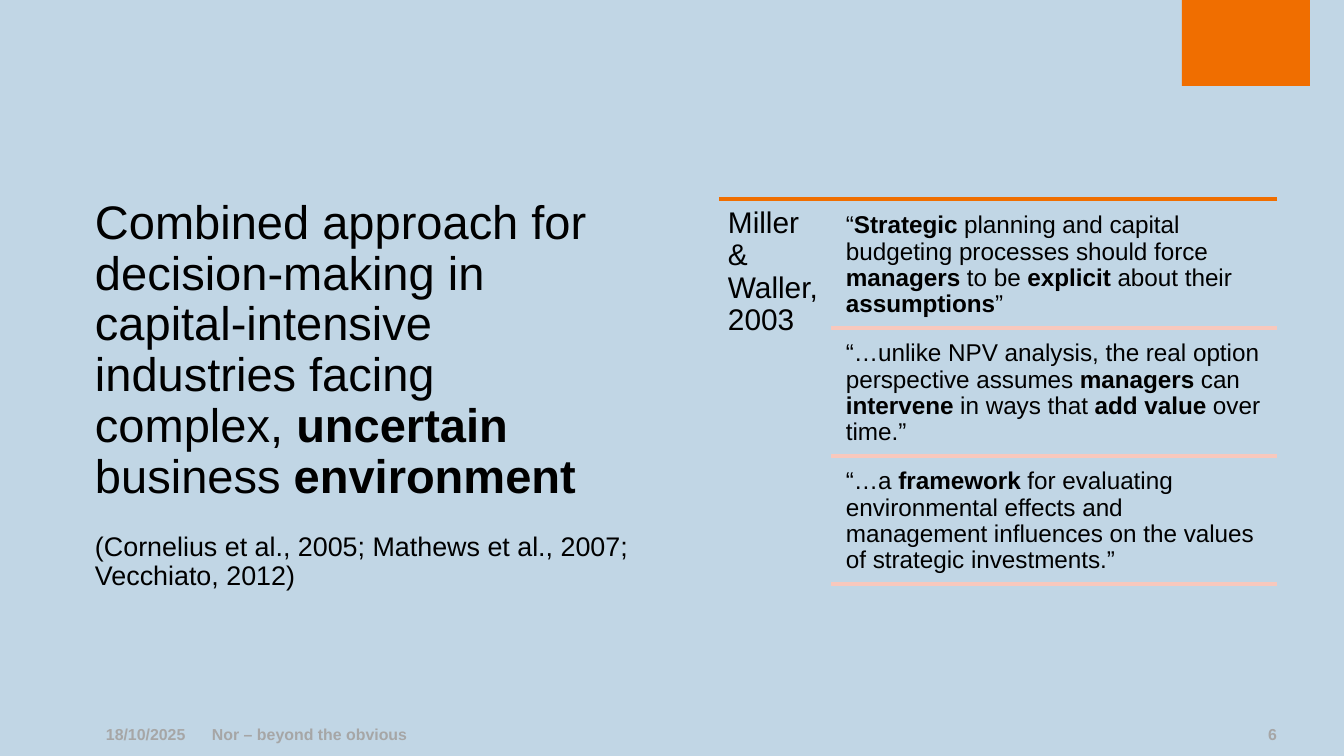
from pptx import Presentation
from pptx import util as u
from pptx.dml.color import RGBColor
from pptx.enum import shapes, text
from pptx.oxml.ns import qn
from lxml import etree

SCALE = 914400 / 134.4
ORANGE, PINK, BLACK, GREY, SKY = "F06E00", "F8C8BD", "000000", "A6A6A6", "C1D6E5"


def px(n):
    return u.Emu(round(n * SCALE))


def rgb(code):
    return RGBColor.from_string(code)


class Deck:
    font = "Arial"

    def __init__(self, wide, high):
        self.prs = Presentation()
        self.prs.slide_width, self.prs.slide_height = px(wide), px(high)
        self.slide = self.prs.slides.add_slide(self.prs.slide_layouts[6])
        fill = self.slide.background.fill
        fill.solid()
        fill.fore_color.rgb = rgb(SKY)

    def rect(self, x, y, w, h, color):
        box = self.slide.shapes.add_shape(
            shapes.MSO_SHAPE.RECTANGLE, px(x), px(y), px(w), px(h))
        box.shadow.inherit = False
        box.fill.solid()
        box.fill.fore_color.rgb = rgb(color)
        box.line.fill.background()

    def rule(self, x, y, end, color):
        line = self.slide.shapes.add_connector(
            shapes.MSO_CONNECTOR.STRAIGHT, px(x), px(y), px(end), px(y))
        line.line.color.rgb = rgb(color)
        line.line.width = u.Pt(2)
        etree.SubElement(line._element.spPr, qn("a:effectLst"))

    def text(self, x, y, w, h, paras, inset=0, color=BLACK, bold=False,
             anchor=text.MSO_ANCHOR.TOP, align=text.PP_ALIGN.LEFT):
        """Each paragraph is (words, size, space before); *stars* mark bold."""
        frame = self.slide.shapes.add_textbox(px(x), px(y), px(w), px(h)).text_frame
        frame.word_wrap = True
        frame.vertical_anchor = anchor
        frame.margin_left = frame.margin_right = px(inset)
        frame.margin_top = frame.margin_bottom = px(inset)
        for i, (words, size, gap) in enumerate(paras):
            para = frame.add_paragraph() if i else frame.paragraphs[0]
            para.alignment = align
            para.line_spacing = 0.9
            para.space_before = u.Pt(gap)
            para.font.name, para.font.size = self.font, u.Pt(size)
            para.font.color.rgb = rgb(color)
            para.font.bold = bold
            for j, part in enumerate(words.split("*")):
                if part:
                    run = para.add_run()
                    run.text = part
                    if j % 2:
                        run.font.bold = True


def main():
    deck = Deck(1344, 756)
    mid = text.MSO_ANCHOR.MIDDLE
    left, right = text.PP_ALIGN.LEFT, text.PP_ALIGN.RIGHT

    # Corner block
    deck.rect(1182, 0, 128, 86, ORANGE)

    # Title with sources
    deck.text(95, 196, 535, 398, [
        ("Combined approach for decision-making in capital-intensive industries "
         "facing complex, *uncertain* business *environment*", 25.2, 0),
        ("(Cornelius et al., 2005; Mathews et al., 2007; Vecchiato, 2012)", 14.4, 16),
    ], anchor=mid)

    # Author of the quotes
    deck.rule(719, 199, 1277, ORANGE)
    deck.text(719, 199, 112, 391, [("Miller & Waller, 2003", 16, 0)], inset=9)

    # Quotes, each with a rule below
    quotes = [
        "“*Strategic* planning and capital budgeting processes should force "
        "*managers* to be *explicit* about their *assumptions*”",
        "“…unlike NPV analysis, the real option perspective assumes *managers* can "
        "*intervene* in ways that *add value *over time.”",
        "“…a *framework* for evaluating environmental effects and management "
        "influences on the values of strategic investments.”",
    ]
    step = 128
    for i, quote in enumerate(quotes):
        top = 206 + i * step
        deck.text(839, top, 438, 122, [(quote, 13, 0)], inset=7)
        deck.rule(831, top + 122, 1277, PINK)

    # Footer
    for x, w, words, align in [
        (106, 100, "18/10/2025", left),
        (212, 400, "Nor – beyond the obvious", left),
        (1217, 60, "6", right),
    ]:
        deck.text(x, 723, w, 24, [(words, 8.5, 0)], color=GREY, bold=True,
                  anchor=mid, align=align)

    deck.prs.save("out.pptx")


if __name__ == "__main__":
    main()
